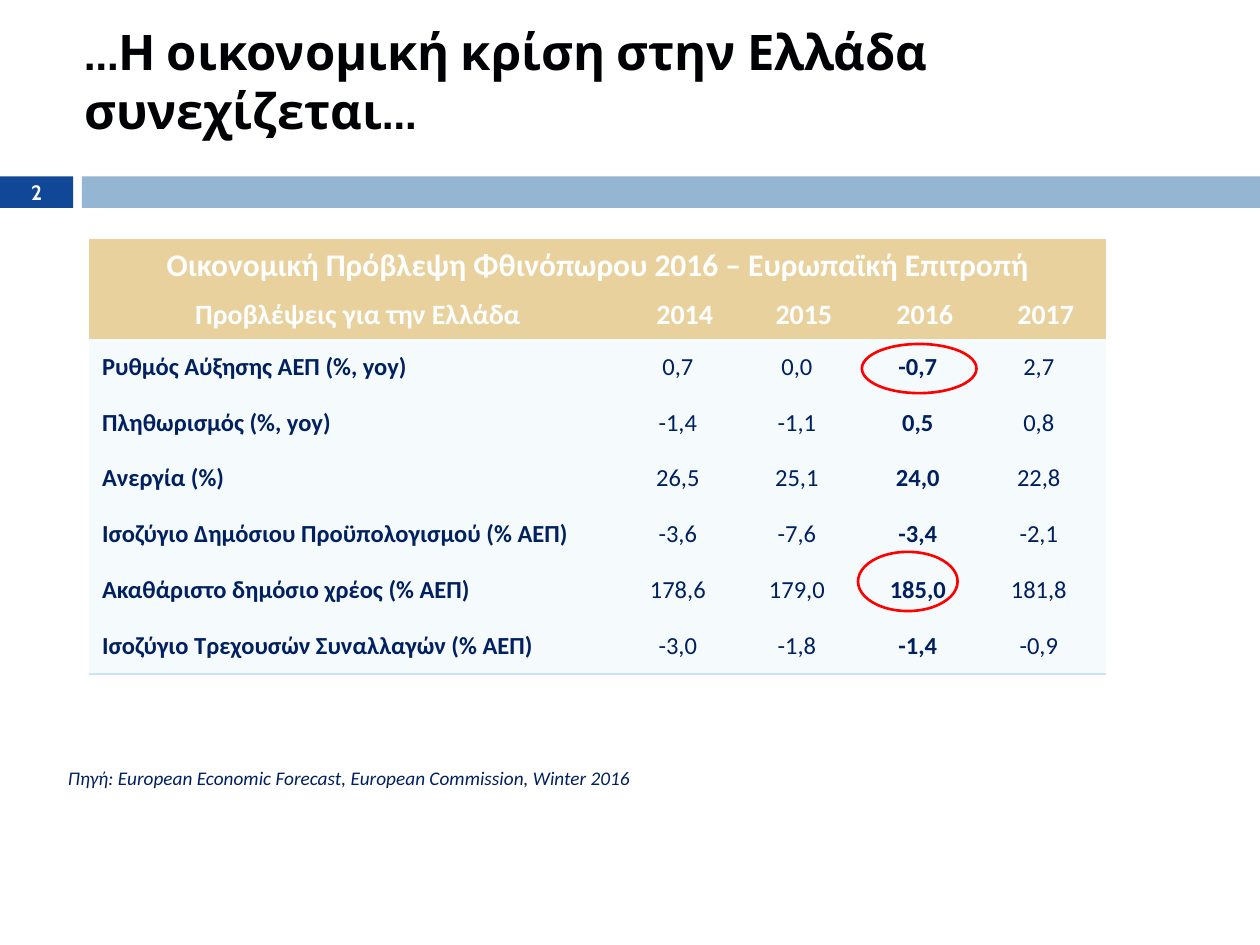
from dataclasses import dataclass

from lxml import etree
from pptx import Presentation, util as u
from pptx.dml import color
from pptx.enum import shapes, text
from pptx.oxml import ns

In = u.Inches


@dataclass(frozen=True)
class Theme:
    title: str = "000104"
    number_bg: str = "114797"
    band: str = "94B6D2"
    head_bg: str = "E8D19D"
    body_bg: str = "F5FAFC"
    rule: str = "C8E4F1"
    navy: str = "002060"
    white: str = "FFFFFF"
    ring: str = "FF0000"
    head_font: str = "Cabin"
    body_font: str = "Calibri"
    title_size: float = 28
    caption_size: float = 18
    head_size: float = 16
    body_size: float = 14
    number_size: float = 11.9
    source_size: float = 11


T = Theme()
LEFT, CENTER = text.PP_ALIGN.LEFT, text.PP_ALIGN.CENTER
TOP, MIDDLE = text.MSO_ANCHOR.TOP, text.MSO_ANCHOR.MIDDLE

CAPTION = "Οικονομική Πρόβλεψη Φθινόπωρου 2016 – Ευρωπαϊκή Επιτροπή"
HEADINGS = ["Προβλέψεις για την Ελλάδα", "2014", "2015", "2016", "2017"]
FORECASTS = [
    ["Ρυθμός Αύξησης ΑΕΠ (%, yoy)", "0,7", "0,0", "-0,7", "2,7"],
    ["Πληθωρισμός (%, yoy)", "-1,4", "-1,1", "0,5", "0,8"],
    ["Ανεργία (%)", "26,5", "25,1", "24,0", "22,8"],
    ["Ισοζύγιο Δημόσιου Προϋπολογισμού (% ΑΕΠ)", "-3,6", "-7,6", "-3,4", "-2,1"],
    ["Ακαθάριστο δημόσιο χρέος (% ΑΕΠ)", "178,6", "179,0", "185,0", "181,8"],
    ["Ισοζύγιο Τρεχουσών Συναλλαγών (% ΑΕΠ)", "-3,0", "-1,8", "-1,4", "-0,9"],
]
LABEL_COLUMN, BOLD_COLUMNS = 0, (0, 3)


def rgb(value):
    return color.RGBColor.from_string(value)


def write(tf, words, fill, align=LEFT, **font):
    p = tf.paragraphs[0]
    p.alignment = align
    r = p.add_run()
    r.text = words
    r.font.color.rgb = rgb(fill)
    for name, value in font.items():
        setattr(r.font, name, value)


def add_text(s, box, words, fill, align=LEFT, anchor=TOP, **font):
    tf = s.shapes.add_textbox(*map(In, box)).text_frame
    tf.word_wrap = True
    tf.vertical_anchor = anchor
    write(tf, words, fill, align, **font)


def add_plain(s, kind, box, fill=None, line=None):
    sp = s.shapes.add_shape(kind, *map(In, box))
    sp.shadow.inherit = False
    if fill:
        sp.fill.solid()
        sp.fill.fore_color.rgb = rgb(fill)
    else:
        sp.fill.background()
    if line:
        sp.line.color.rgb = rgb(line)
        sp.line.width = u.Pt(1.5)
    else:
        sp.line.fill.background()


def set_borders(cell, bottom=None):
    """Clear every edge, then rule the bottom one if a colour is given."""
    tc_pr = cell._tc.get_or_add_tcPr()
    for i, edge in enumerate(("lnL", "lnR", "lnT", "lnB")):
        ln = etree.Element(ns.qn("a:" + edge), w=str(u.Pt(0.75)))
        if edge == "lnB" and bottom:
            solid = etree.SubElement(ln, ns.qn("a:solidFill"))
            etree.SubElement(solid, ns.qn("a:srgbClr"), val=bottom)
        else:
            etree.SubElement(ln, ns.qn("a:noFill"))
        tc_pr.insert(i, ln)


def fill_cell(cell, words, fill, ink, margins, rule=None, align=CENTER, **font):
    cell.vertical_anchor = MIDDLE
    cell.fill.solid()
    cell.fill.fore_color.rgb = rgb(fill)
    for side, value in zip(("left", "top", "right", "bottom"), margins):
        setattr(cell, "margin_" + side, In(value))
    set_borders(cell, rule)
    if words:
        write(cell.text_frame, words, ink, align, name=T.body_font, **font)


def title_region(s, box):
    add_text(s, box, "…Η οικονομική κρίση στην Ελλάδα συνεχίζεται…", T.title,
             anchor=MIDDLE, name=T.head_font, size=u.Pt(T.title_size), bold=True)


def number_band(s, box):
    x, y, w, h = box
    number_w, gap = 0.58, 0.07
    band_x = number_w + gap
    add_plain(s, shapes.MSO_SHAPE.RECTANGLE, (x, y, number_w, h), T.number_bg)
    add_plain(s, shapes.MSO_SHAPE.RECTANGLE, (x + band_x, y, w - band_x, h), T.band)
    add_text(s, (x, y, number_w, h), "2", T.white, CENTER, MIDDLE,
             name=T.head_font, size=u.Pt(T.number_size), bold=True)


def forecast_table(s, box):
    h = box[3]
    rows = [[CAPTION, "", "", "", ""], HEADINGS] + FORECASTS
    table = s.shapes.add_table(len(rows), len(HEADINGS), *map(In, box)).table
    head_heights = [0.41, 0.38]
    body_height = (h - sum(head_heights)) / len(FORECASTS)
    heights = head_heights + [body_height] * len(FORECASTS)
    for row, height in zip(table.rows, heights):
        row.height = In(height)
    for column, width in zip(table.columns, (4.26, 0.93, 0.96, 0.96, 0.96)):
        column.width = In(width)

    for i, values in enumerate(rows):
        for j, words in enumerate(values):
            cell = table.cell(i, j)
            if i < len(head_heights):
                size = T.head_size if i else T.caption_size
                fill_cell(cell, words, T.head_bg, T.white, [0.05] * 4,
                          size=u.Pt(size), bold=True)
            else:
                fill_cell(cell, words, T.body_bg, T.navy, (0.1, 0.1, 0.21, 0.1),
                          T.rule, LEFT if j == LABEL_COLUMN else CENTER,
                          size=u.Pt(T.body_size), bold=j in BOLD_COLUMNS)
    table.cell(0, 0).merge(table.cell(0, len(HEADINGS) - 1))


def source_note(s, box):
    add_text(s, box, "Πηγή: European Economic Forecast, European Commission, Winter 2016",
             T.navy, name=T.body_font, size=u.Pt(T.source_size), italic=True)


def highlight(s, box):
    add_plain(s, shapes.MSO_SHAPE.OVAL, box, line=T.ring)


def main():
    prs = Presentation()
    prs.slide_width, prs.slide_height = In(10), In(7.5)
    s = prs.slides.add_slide(prs.slide_layouts[6])

    # Heading
    number_band(s, (0, 1.4, 10, 0.25))
    title_region(s, (0.57, 0.29, 9, 0.69))

    # Forecasts and their source
    forecast_table(s, (0.71, 1.9, 8.07, 3.45))
    source_note(s, (0.44, 6.03, 7.56, 0.29))

    # Rings around growth and debt in 2016
    for box in ((6.84, 2.73, 0.91, 0.39), (6.81, 4.38, 0.79, 0.47)):
        highlight(s, box)

    prs.save("out.pptx")


if __name__ == "__main__":
    main()
